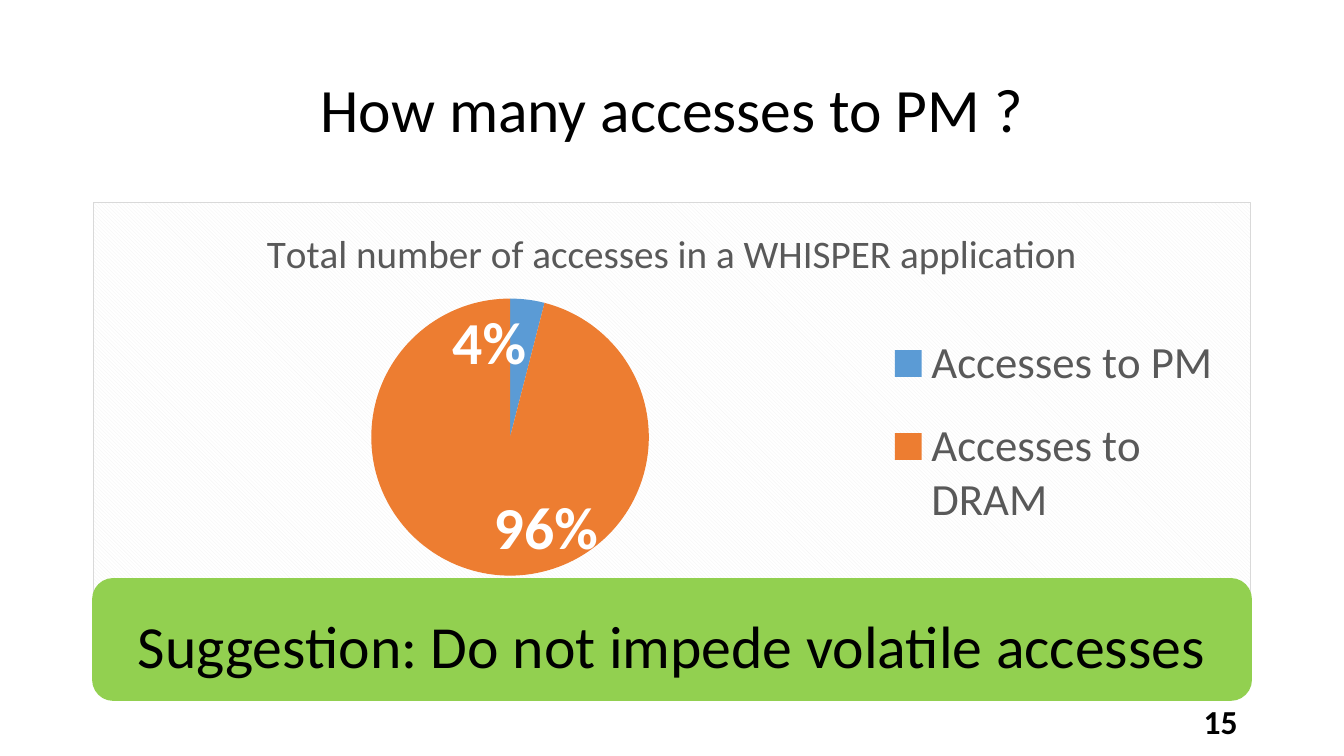
from dataclasses import dataclass

from lxml.etree import SubElement
from pptx import Presentation
from pptx.chart.data import CategoryChartData
from pptx.dml.color import RGBColor
from pptx.enum.chart import XL_CHART_TYPE, XL_LABEL_POSITION, XL_LEGEND_POSITION
from pptx.enum.shapes import MSO_SHAPE
from pptx.enum.text import MSO_ANCHOR, PP_ALIGN
from pptx.oxml import parse_xml
from pptx.oxml.ns import nsdecls, qn
from pptx.util import Pt

EMU_PER_PX = 914400 / 134.4


def px(length):
    return round(length * EMU_PER_PX)


@dataclass(frozen=True)
class Theme:
    font: str = "Calibri"
    ink: str = "000000"
    muted: str = "595959"
    white: str = "FFFFFF"
    hatch: str = "F2F2F2"
    border: str = "D9D9D9"
    banner: str = "92D050"
    slices: tuple = ("5B9BD5", "ED7D31")
    title_size: int = 33
    banner_size: int = 32
    label_size: int = 32
    legend_size: int = 24
    chart_title_size: int = 21
    number_size: int = 18


class SlideBuilder:
    def __init__(self, slide, theme):
        self.slide = slide
        self.theme = theme

    def style_font(self, font, size, color, bold=False):
        font.name = self.theme.font
        font.size = Pt(size)
        font.bold = bold
        font.color.rgb = RGBColor.from_string(color)

    def fill_frame(self, frame, wording, size, align, bold=False, spacing=None):
        frame.word_wrap = True
        frame.vertical_anchor = MSO_ANCHOR.MIDDLE
        frame.text = wording
        paragraph = frame.paragraphs[0]
        paragraph.alignment = align
        paragraph.line_spacing = spacing
        for run in paragraph.runs:
            self.style_font(run.font, size, self.theme.ink, bold)

    def text(self, box, wording, size, align, **options):
        label = self.slide.shapes.add_textbox(*map(px, box))
        self.fill_frame(label.text_frame, wording, size, align, **options)

    def banner(self, box, wording):
        color = RGBColor.from_string(self.theme.banner)
        banner = self.slide.shapes.add_shape(MSO_SHAPE.ROUNDED_RECTANGLE, *map(px, box))
        banner.shadow.inherit = False
        banner.fill.solid()
        banner.fill.fore_color.rgb = color
        banner.line.color.rgb = color
        banner.line.width = Pt(1)
        self.fill_frame(banner.text_frame, wording, self.theme.banner_size,
                        PP_ALIGN.CENTER, spacing=1.15)

    def place(self, part, position, chart_box, part_box, **target):
        left, top, width, height = chart_box
        x, y, w, h = part_box
        values = {**target, "xMode": "edge", "yMode": "edge",
                  "x": f"{(x - left) / width:.2f}", "y": f"{(y - top) / height:.2f}",
                  "w": f"{w / width:.2f}", "h": f"{h / height:.2f}"}
        for previous in part.findall(qn("c:layout")):
            part.remove(previous)
        layout = parse_xml(f"<c:layout {nsdecls('c')}/>")
        part.insert(position, layout)
        manual = SubElement(layout, qn("c:manualLayout"))
        for tag, value in values.items():
            SubElement(manual, qn(f"c:{tag}")).set("val", value)

    def pie(self, box, title, shares, pie_box, legend_box):
        theme = self.theme
        data = CategoryChartData()
        data.categories = list(shares)
        data.add_series("Series 1", list(shares.values()))
        chart = self.slide.shapes.add_chart(XL_CHART_TYPE.PIE, *map(px, box), data).chart
        self.style_font(chart.font, 10, theme.ink)

        chart.has_title = True
        heading = chart.chart_title.text_frame
        heading.text = title
        self.style_font(heading.paragraphs[0].runs[0].font, theme.chart_title_size, theme.muted)

        chart.has_legend = True
        chart.legend.position = XL_LEGEND_POSITION.RIGHT
        chart.legend.include_in_layout = False
        self.style_font(chart.legend.font, theme.legend_size, theme.muted)

        plot = chart.plots[0]
        plot.vary_by_categories = True
        pie = plot.series[0]
        for index, color in enumerate(theme.slices):
            fill = pie.points[index].format.fill
            fill.solid()
            fill.fore_color.rgb = RGBColor.from_string(color)
        labels = pie.data_labels
        labels.show_percentage = True
        labels.show_value = False
        labels.number_format = "0%"
        labels.number_format_is_linked = False
        labels.position = XL_LABEL_POSITION.INSIDE_END
        self.style_font(labels.font, theme.label_size, theme.white, bold=True)

        space = chart.element
        self.place(space.find(".//" + qn("c:plotArea")), 0, box, pie_box, layoutTarget="inner")
        self.place(space.find(".//" + qn("c:legend")), 1, box, legend_box)
        space.find(qn("c:chart")).addnext(parse_xml(
            f'<c:spPr {nsdecls("c", "a")}><a:pattFill prst="dkDnDiag">'
            f'<a:fgClr><a:srgbClr val="{theme.hatch}"/></a:fgClr>'
            f'<a:bgClr><a:srgbClr val="{theme.white}"/></a:bgClr></a:pattFill>'
            f'<a:ln w="{int(Pt(0.75))}"><a:solidFill><a:srgbClr val="{theme.border}"/>'
            "</a:solidFill></a:ln></c:spPr>"))


def main():
    deck = Presentation()
    deck.slide_width, deck.slide_height = px(1344), px(756)
    theme = Theme()
    page = SlideBuilder(deck.slides.add_slide(deck.slide_layouts[6]), theme)
    page.text((93, 40, 1158, 146), "How many accesses to PM ?", theme.title_size,
              PP_ALIGN.CENTER, spacing=0.9)
    page.pie((93, 202, 1158, 480), "Total number of accesses in a WHISPER application",
             {"Accesses to PM": 4, "Accesses to DRAM": 96},
             pie_box=(370, 300, 280, 280), legend_box=(877, 308, 346, 248))
    page.text((949, 701, 302, 40), "15", theme.number_size, PP_ALIGN.RIGHT, bold=True)
    page.banner((93, 579, 1158, 121), "Suggestion: Do not impede volatile accesses")
    deck.save("out.pptx")


if __name__ == "__main__":
    main()
